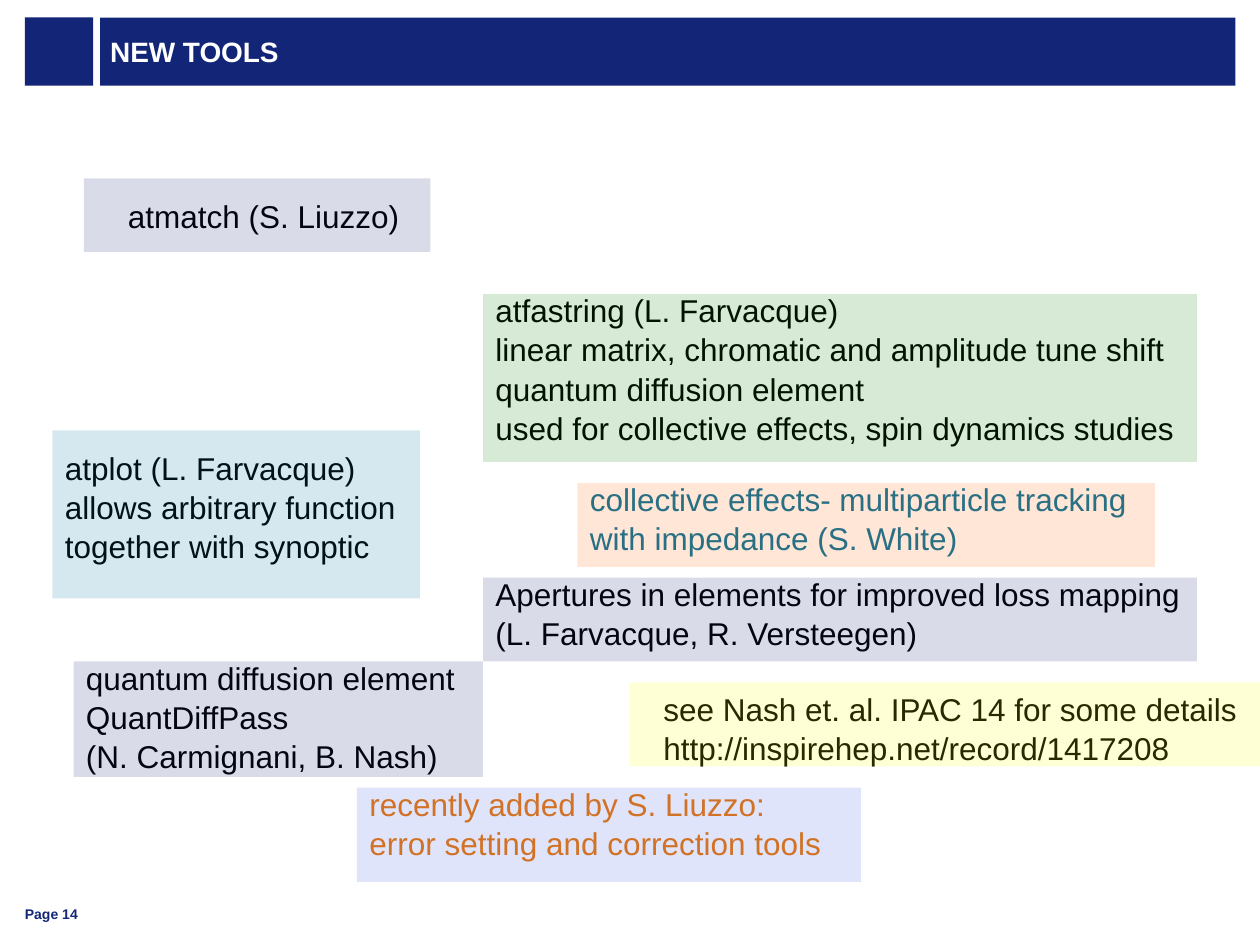
from dataclasses import dataclass

import pptx
import pptx.dml.color
import pptx.enum.shapes
import pptx.enum.text
import pptx.oxml
import pptx.oxml.ns
import pptx.util

Pt = pptx.util.Pt
ANCHOR = pptx.enum.text.MSO_ANCHOR


@dataclass(frozen=True)
class Theme:
    font: str = "Arial"
    navy: str = "132577"
    white: str = "FFFFFF"
    black: str = "000000"
    green: str = "008000"
    teal: str = "00729F"
    orange: str = "FF6600"
    amber: str = "ED7703"
    yellow: str = "FFFF00"
    blue: str = "3F5CE0"
    title_size: int = 16
    body_size: int = 18
    page_size: int = 8
    tint_alpha: int = 16
    line_spacing: float = 1.04


THEME = Theme()

# tint box, tint colour, text offset in the box, text width, text colour, lines
NOTES = [
    ((276, 168, 408, 96), THEME.green, (0, -6), 406, THEME.black,
     ["atfastring (L. Farvacque)",
      "linear matrix, chromatic and amplitude tune shift",
      "quantum diffusion element",
      "used for collective effects, spin dynamics studies"]),
    ((48, 102, 198, 42), THEME.navy, (18, 6), 172, THEME.black,
     ["atmatch (S. Liuzzo)"]),
    ((30, 246, 210, 96), THEME.teal, (0, 6), 206, THEME.black,
     ["atplot (L. Farvacque)", "allows arbitrary function",
      "together with synoptic"]),
    ((330, 276, 330, 48), THEME.orange, (0, -6), 324, THEME.teal,
     ["collective effects- multiparticle tracking",
      "with impedance (S. White)"]),
    ((42, 378, 234, 66), THEME.navy, (0, -6), 228, THEME.black,
     ["quantum diffusion element", "QuantDiffPass",
      "(N. Carmignani, B. Nash)"]),
    ((360, 390, 360, 48), THEME.yellow, (12, 0), 346, THEME.black,
     ["see Nash et. al. IPAC 14 for some details",
      "http://inspirehep.net/record/1417208"]),
    ((204, 450, 288, 54), THEME.blue, (0, -6), 276, THEME.amber,
     ["recently added by S. Liuzzo:", "error setting and correction tools"]),
    ((276, 330, 408, 48), THEME.navy, (0, -6), 411, THEME.black,
     ["Apertures in elements for improved loss mapping",
      "(L. Farvacque, R. Versteegen)"]),
]


def rgb(color):
    return pptx.dml.color.RGBColor.from_string(color)


def write(sp, lines, *, size, color, bold=False, anchor=ANCHOR.TOP,
          margins=(7.2, 3.6), spacing=1.0):
    tf = sp.text_frame
    tf.word_wrap = True
    tf.auto_size = pptx.enum.text.MSO_AUTO_SIZE.NONE
    tf.vertical_anchor = anchor
    tf.margin_left = tf.margin_right = Pt(margins[0])
    tf.margin_top = tf.margin_bottom = Pt(margins[1])
    for i, line in enumerate(lines):
        p = tf.paragraphs[0] if i == 0 else tf.add_paragraph()
        p.alignment = pptx.enum.text.PP_ALIGN.LEFT
        p.line_spacing = spacing
        r = p.add_run()
        r.text = line
        r.font.name = THEME.font
        r.font.size = Pt(size)
        r.font.bold = bold
        r.font.color.rgb = rgb(color)


def add_rect(slide, box, color, alpha=None):
    """Add a plain rectangle; alpha is its opacity in percent."""
    sp = slide.shapes.add_shape(
        pptx.enum.shapes.MSO_SHAPE.RECTANGLE, *map(Pt, box))
    sp.shadow.inherit = False
    sp.line.fill.background()
    sp.fill.solid()
    sp.fill.fore_color.rgb = rgb(color)
    if alpha is not None:
        clr = sp._element.spPr.find(".//" + pptx.oxml.ns.qn("a:srgbClr"))
        node = pptx.oxml.parse_xml(
            f'<a:alpha {pptx.oxml.ns.nsdecls("a")} val="{alpha * 1000}"/>')
        clr.append(node)


def add_header(slide, box, title):
    """Place a square and the title bar side by side."""
    left, top, width, height = box
    gap = 4
    add_rect(slide, (left, top, height, height), THEME.navy)
    sp = slide.shapes.title
    sp.left, sp.top = Pt(left + height + gap), Pt(top)
    sp.width, sp.height = Pt(width - height - gap), Pt(height)
    sp.fill.solid()
    sp.fill.fore_color.rgb = rgb(THEME.navy)
    write(sp, [title], size=THEME.title_size, color=THEME.white, bold=True,
          anchor=ANCHOR.MIDDLE, margins=(5.76, 0))


def add_note(slide, box, tint, offset, text_width, color, lines):
    """Place lines of text under a translucent tint."""
    left, top = box[0] + offset[0], box[1] + offset[1]
    height = 7.2 + 21.8 * len(lines)
    sp = slide.shapes.add_textbox(*map(Pt, (left, top, text_width, height)))
    write(sp, lines, size=THEME.body_size, color=color,
          spacing=THEME.line_spacing)
    add_rect(slide, box, tint, THEME.tint_alpha)


def add_page_number(slide, box, text):
    sp = slide.shapes.add_textbox(*map(Pt, box))
    write(sp, [text], size=THEME.page_size, color=THEME.navy, bold=True,
          anchor=ANCHOR.BOTTOM, margins=(0, 0))


def main():
    prs = pptx.Presentation()
    prs.slide_width, prs.slide_height = Pt(720), Pt(540)
    slide = prs.slides.add_slide(prs.slide_layouts.get_by_name("Title Only"))
    add_header(slide, (14.2, 10, 691.8, 39), "NEW TOOLS")
    add_page_number(slide, (14.2, 510.5, 33, 16.5), "Page 14")
    for note in NOTES:
        add_note(slide, *note)
    prs.save("out.pptx")


if __name__ == "__main__":
    main()
